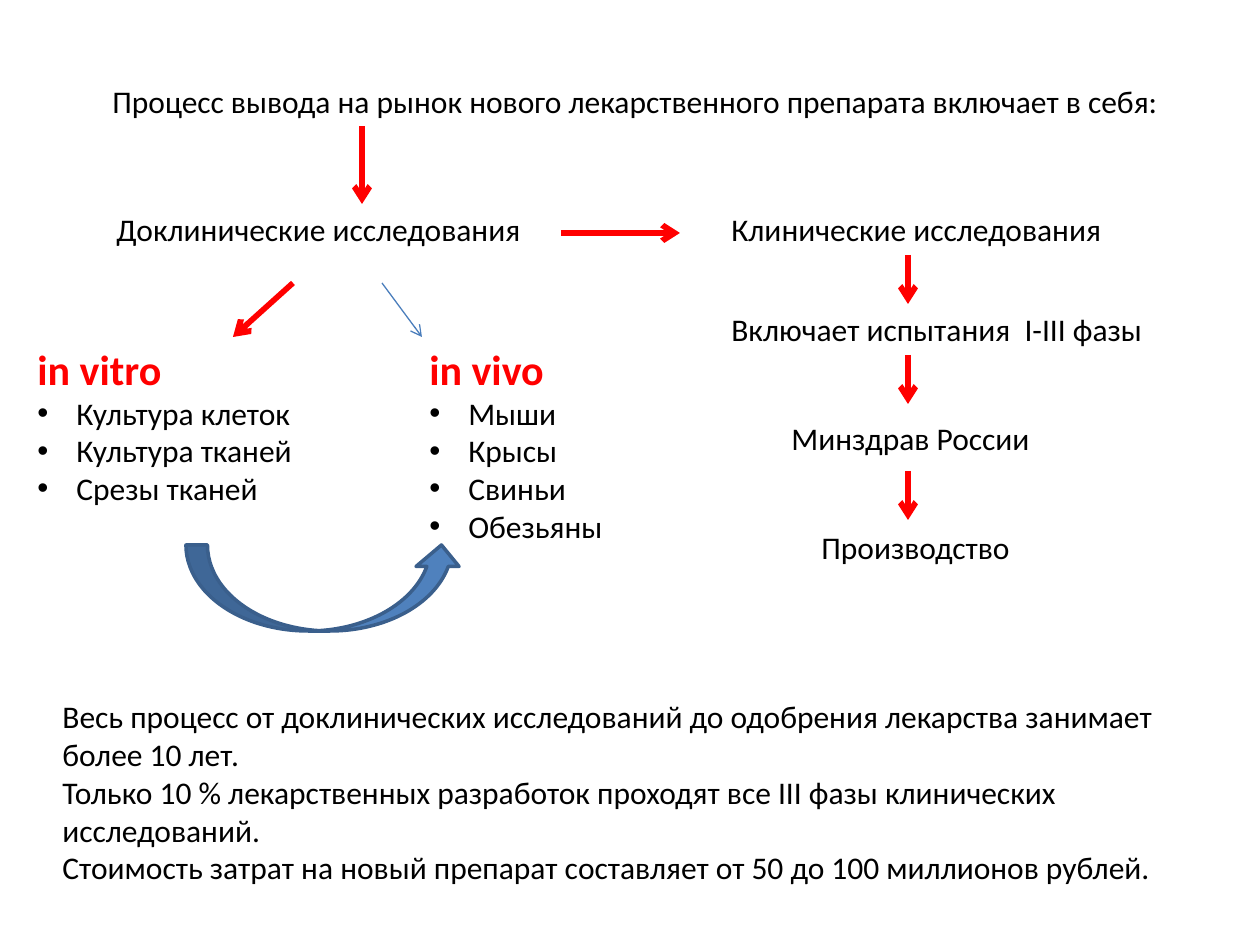
from dataclasses import dataclass

from lxml import etree
from pptx import Presentation
from pptx.dml.color import RGBColor
from pptx.enum.shapes import MSO_CONNECTOR, MSO_SHAPE
from pptx.enum.text import MSO_AUTO_SIZE
from pptx.oxml.ns import qn
from pptx.util import Pt

STRAIGHT = MSO_CONNECTOR.STRAIGHT
CURVED_UP_ARROW = MSO_SHAPE.CURVED_UP_ARROW
FIT_SHAPE = MSO_AUTO_SIZE.SHAPE_TO_FIT_TEXT
EMU_PER_PX = 914400 / 126


@dataclass(frozen=True)
class Theme:
    font: str = "Calibri"
    text: str = "000000"
    accent: str = "FF0000"
    thin_arrow: str = "4B7EBC"
    curve_fill: str = "4F81BD"
    curve_line: str = "3A5F8C"
    body_size: int = 18
    heading_size: int = 24
    thick: float = 3.25
    thin: float = 0.75
    outline: float = 2
    bullet_indent: int = 39


THEME = Theme()


def px(length):
    return round(length * EMU_PER_PX)


def rgb(value):
    return RGBColor.from_string(value)


def style_paragraph(para, size, color, bold=False):
    para.font.name = THEME.font
    para.font.size = Pt(size)
    para.font.color.rgb = rgb(color)
    para.font.bold = bold


def add_bullet(para):
    properties = para._p.get_or_add_pPr()
    properties.set("marL", str(px(THEME.bullet_indent)))
    properties.set("indent", str(-px(THEME.bullet_indent)))
    bullet_font = etree.Element(qn("a:buFont"), typeface="Arial")
    bullet = etree.Element(qn("a:buChar"), char="•")
    properties.insert(0, bullet_font)
    properties.insert(1, bullet)


def add_text(slide, left, top, width, height, *lines):
    box = slide.shapes.add_textbox(px(left), px(top), px(width), px(height))
    frame = box.text_frame
    frame.word_wrap = True
    frame.auto_size = FIT_SHAPE
    for index, line in enumerate(lines):
        para = frame.add_paragraph() if index else frame.paragraphs[0]
        para.text = line
        style_paragraph(para, THEME.body_size, THEME.text)
    return frame


def add_list(slide, left, top, width, height, heading, items):
    frame = add_text(slide, left, top, width, height, heading, *items)
    heading_para, *item_paras = frame.paragraphs
    style_paragraph(heading_para, THEME.heading_size, THEME.accent, bold=True)
    for para in item_paras:
        add_bullet(para)


def add_arrow(slide, start, end, color=THEME.accent, weight=THEME.thick):
    arrow = slide.shapes.add_connector(
        STRAIGHT, *(px(value) for value in (*start, *end))
    )
    arrow.line.color.rgb = rgb(color)
    arrow.line.width = Pt(weight)
    etree.SubElement(arrow.line._get_or_add_ln(), qn("a:tailEnd"), type="arrow")
    etree.SubElement(arrow._element.spPr, qn("a:effectLst"))


def add_curved_arrow(slide, left, top, width, height):
    arrow = slide.shapes.add_shape(
        CURVED_UP_ARROW, px(left), px(top), px(width), px(height)
    )
    arrow.shadow.inherit = False
    arrow.fill.solid()
    arrow.fill.fore_color.rgb = rgb(THEME.curve_fill)
    arrow.line.color.rgb = rgb(THEME.curve_line)
    arrow.line.width = Pt(THEME.outline)


def add_preclinical(slide):
    add_text(slide, 104, 204, 486, 50, "Доклинические исследования")
    add_list(slide, 417, 337, 263, 267, "in vivo",
             ["Мыши", "Крысы", "Свиньи", "Обезьяны"])
    add_list(slide, 25, 337, 323, 217, "in vitro",
             ["Культура клеток", "Культура тканей", "Срезы тканей"])
    add_arrow(slide, (293, 283), (233, 337))
    add_arrow(slide, (382, 283), (422, 337), THEME.thin_arrow, THEME.thin)
    add_curved_arrow(slide, 186, 545, 277, 86)


def add_clinical(slide):
    add_text(slide, 719, 204, 456, 50, "Клинические исследования")
    add_text(slide, 719, 304, 525, 102, "Включает испытания  I-III фазы")
    add_text(slide, 779, 413, 277, 50, "Минздрав России")
    add_text(slide, 809, 522, 218, 50, "Производство")
    for top in (255, 355, 471):
        add_arrow(slide, (908, top), (908, top + 49))


def main():
    deck = Presentation()
    deck.slide_width = px(1260)
    deck.slide_height = px(945)
    slide = deck.slides.add_slide(deck.slide_layouts[6])
    add_text(
        slide, 100, 76, 1081, 50,
        "Процесс вывода на рынок нового лекарственного препарата включает в себя:",
    )
    add_preclinical(slide)
    add_arrow(slide, (362, 126), (362, 204))
    add_arrow(slide, (561, 233), (680, 233))
    add_clinical(slide)
    add_text(
        slide, 50, 691, 1155, 204,
        "Весь процесс от доклинических исследований до одобрения лекарства занимает более 10 лет.",
        "Только 10 % лекарственных разработок проходят все III фазы клинических исследований.",
        "Стоимость затрат на новый препарат составляет от 50 до 100 миллионов рублей.",
    )
    deck.save("out.pptx")


if __name__ == "__main__":
    main()
